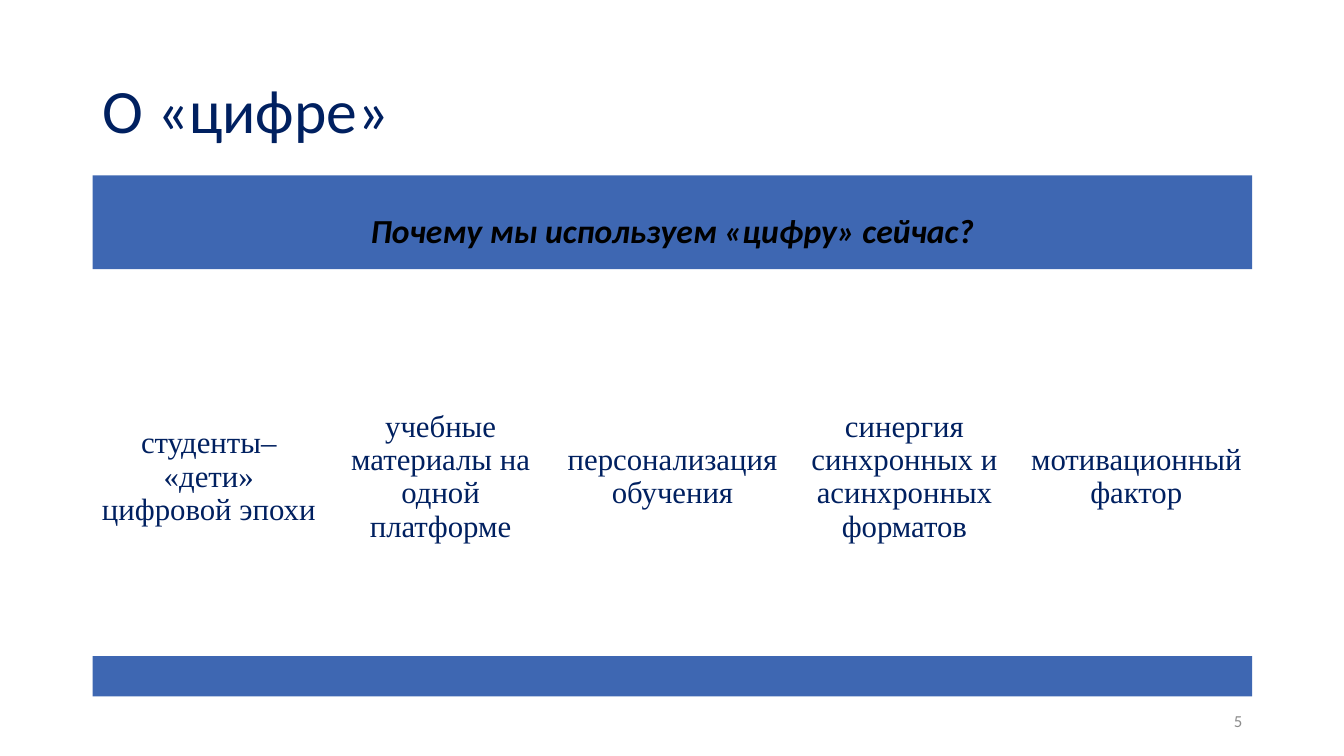
from pptx import Presentation
from pptx.dml.color import RGBColor
from pptx.enum.shapes import MSO_SHAPE
from pptx.enum.text import MSO_ANCHOR, PP_ALIGN
from pptx.util import Inches, Pt

RECTANGLE = MSO_SHAPE.RECTANGLE
MIDDLE = MSO_ANCHOR.MIDDLE
LEFT, CENTER, RIGHT = PP_ALIGN.LEFT, PP_ALIGN.CENTER, PP_ALIGN.RIGHT

NAVY = RGBColor(0x00, 0x20, 0x60)
BLUE = RGBColor(0x3E, 0x67, 0xB2)
WHITE = RGBColor(0xFF, 0xFF, 0xFF)
BLACK = RGBColor(0x00, 0x00, 0x00)
GRAY = RGBColor(0x8C, 0x8C, 0x8C)

MARGIN, CONTENT_WIDTH = 0.92, 11.5
REASONS = [
    "студенты– «дети» цифровой эпохи",
    "учебные материалы на одной платформе",
    "персонализация обучения",
    "синергия синхронных и асинхронных форматов",
    "мотивационный фактор",
]


def write_text(frame, text, font_name, size, color, align, line_spacing=0.9):
    frame.word_wrap = True
    frame.vertical_anchor = MIDDLE
    paragraph = frame.paragraphs[0]
    paragraph.text = text
    paragraph.alignment = align
    paragraph.line_spacing = line_spacing
    font = paragraph.font
    font.name = font_name
    font.size = Pt(size)
    font.color.rgb = color
    return paragraph


def add_title(slide, text):
    title = slide.shapes.title
    title.left, title.top = Inches(MARGIN), Inches(0.4)
    title.width, title.height = Inches(CONTENT_WIDTH), Inches(1.45)
    write_text(title.text_frame, text, "Calibri", 44, NAVY, LEFT)


def add_block(slide, left, top, width, height, fill):
    block = slide.shapes.add_shape(
        RECTANGLE, Inches(left), Inches(top), Inches(width), Inches(height))
    block.shadow.inherit = False
    block.fill.solid()
    block.fill.fore_color.rgb = fill
    block.line.fill.background()
    return block


def add_question(slide, text):
    band = add_block(slide, MARGIN, 1.74, CONTENT_WIDTH, 0.93, BLUE)
    frame = band.text_frame
    frame.margin_top, frame.margin_bottom = Inches(0.31), Inches(0.1)
    paragraph = write_text(frame, text, "Calibri", 24, BLACK, CENTER)
    paragraph.font.bold = True
    paragraph.font.italic = True


def add_reasons(slide, reasons):
    width = CONTENT_WIDTH / len(reasons)
    for column, reason in enumerate(reasons):
        block = add_block(slide, MARGIN + column * width, 2.95, width, 3.57, WHITE)
        frame = block.text_frame
        frame.margin_left = frame.margin_right = Inches(0.09)
        frame.margin_top = frame.margin_bottom = Inches(0.09)
        write_text(frame, reason, "Times New Roman", 22, NAVY, CENTER)


def add_page_number(slide, number):
    box = slide.shapes.add_textbox(Inches(9.42), Inches(6.95), Inches(3), Inches(0.4))
    write_text(box.text_frame, number, "Calibri", 12, GRAY, RIGHT, line_spacing=1.0)


def main():
    presentation = Presentation()
    presentation.slide_width = Inches(13.33)
    presentation.slide_height = Inches(7.5)
    title_only = presentation.slide_layouts.get_by_name("Title Only")
    slide = presentation.slides.add_slide(title_only)

    add_title(slide, "О «цифре»")
    add_question(slide, "Почему мы используем «цифру» сейчас?")
    add_reasons(slide, REASONS)
    add_block(slide, MARGIN, 6.51, CONTENT_WIDTH, 0.4, BLUE)
    add_page_number(slide, "5")

    presentation.save("out.pptx")


if __name__ == "__main__":
    main()
